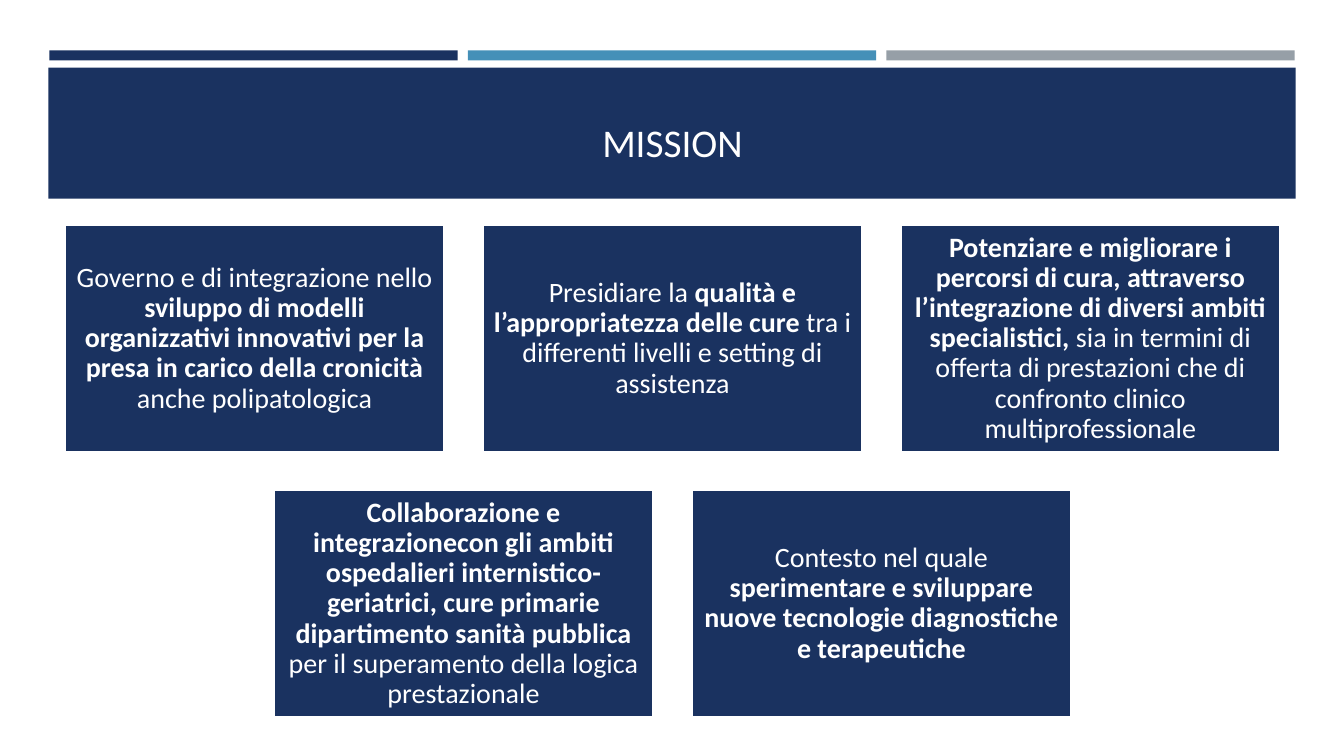
import pptx
import pptx.util
import pptx.dml.color
import pptx.enum.shapes
import pptx.enum.text

Inches, Pt = pptx.util.Inches, pptx.util.Pt
RGBColor = pptx.dml.color.RGBColor
ANCHOR = pptx.enum.text.MSO_ANCHOR

NAVY = RGBColor(0x1A, 0x32, 0x60)
BLUE = RGBColor(0x45, 0x90, 0xB8)
GREY = RGBColor(0x96, 0x9F, 0xA7)
WHITE = RGBColor(0xFF, 0xFF, 0xFF)

# Content: each goal is a list of (text, bold) pieces
HEADING = "MISSION"
GOAL_ROWS = [
    [
        [("Governo e di integrazione nello ", False),
         ("sviluppo di modelli organizzativi innovativi per la presa in carico "
          "della cronicità ", True),
         ("anche polipatologica", False)],
        [("Presidiare la ", False),
         ("qualità e l’appropriatezza delle cure ", True),
         ("tra i differenti livelli e setting di assistenza", False)],
        [("Potenziare e migliorare i percorsi di cura, attraverso "
          "l’integrazione di diversi ambiti specialistici, ", True),
         ("sia in termini di offerta di prestazioni che di confronto clinico "
          "multiprofessionale", False)],
    ],
    [
        [("Collaborazione e integrazionecon gli ambiti ospedalieri "
          "internistico-geriatrici, cure primarie dipartimento sanità "
          "pubblica ", True),
         ("per il superamento della logica prestazionale", False)],
        [("Contesto nel quale ", False),
         ("sperimentare e sviluppare nuove tecnologie diagnostiche e "
          "terapeutiche", True)],
    ],
]

# Grid, in inches
SLIDE_W, SLIDE_H = 13.33, 7.5
STRIPE_LEFT, STRIPE_TOP, STRIPE_W, STRIPE_H, STRIPE_STEP = 0.49, 0.5, 4.05, 0.1, 4.15
BAND = (0.48, 0.67, 12.37, 1.3)
HEADING_BOX = (0.64, 0.77, 12.06, 0.92)
GOAL_TOP, GOAL_W, GOAL_H, GOAL_GAP = 2.23, 3.77, 2.26, 0.375
ROW_STEP = 2.63
CENTRE = HEADING_BOX[0] + HEADING_BOX[2] / 2

deck = pptx.Presentation()
deck.slide_width, deck.slide_height = Inches(SLIDE_W), Inches(SLIDE_H)
slide = deck.slides.add_slide(deck.slide_layouts[6])


def add_block(box, colour):
    block = slide.shapes.add_shape(
        pptx.enum.shapes.MSO_SHAPE.RECTANGLE, *map(Inches, box))
    block.shadow.inherit = False
    block.fill.solid()
    block.fill.fore_color.rgb = colour
    block.line.fill.background()
    return block


def write(frame, pieces, size, anchor):
    frame.word_wrap = True
    frame.vertical_anchor = anchor
    paragraph = frame.paragraphs[0]
    paragraph.alignment = pptx.enum.text.PP_ALIGN.CENTER
    for words, bold in pieces:
        run = paragraph.add_run()
        run.text = words
        run.font.name, run.font.size, run.font.bold = "Calibri", Pt(size), bold
        run.font.color.rgb = WHITE
    return paragraph


# Stripes and heading band
for column, colour in enumerate((NAVY, BLUE, GREY)):
    add_block((STRIPE_LEFT + column * STRIPE_STEP, STRIPE_TOP, STRIPE_W, STRIPE_H), colour)
add_block(BAND, NAVY)
heading = slide.shapes.add_textbox(*map(Inches, HEADING_BOX))
write(heading.text_frame, [(HEADING, False)], 28, ANCHOR.BOTTOM)

# Goals, each row centred
for row, goals in enumerate(GOAL_ROWS):
    row_width = len(goals) * (GOAL_W + GOAL_GAP) - GOAL_GAP
    for column, pieces in enumerate(goals):
        left = CENTRE - row_width / 2 + column * (GOAL_W + GOAL_GAP)
        goal = add_block((left, GOAL_TOP + row * ROW_STEP, GOAL_W, GOAL_H), NAVY)
        goal.line.color.rgb = WHITE
        goal.line.width = Pt(1.75)
        frame = goal.text_frame
        frame.margin_left = frame.margin_right = Inches(0.08)
        frame.margin_top = frame.margin_bottom = Inches(0.08)
        write(frame, pieces, 20, ANCHOR.MIDDLE).line_spacing = 0.9

deck.save("out.pptx")
